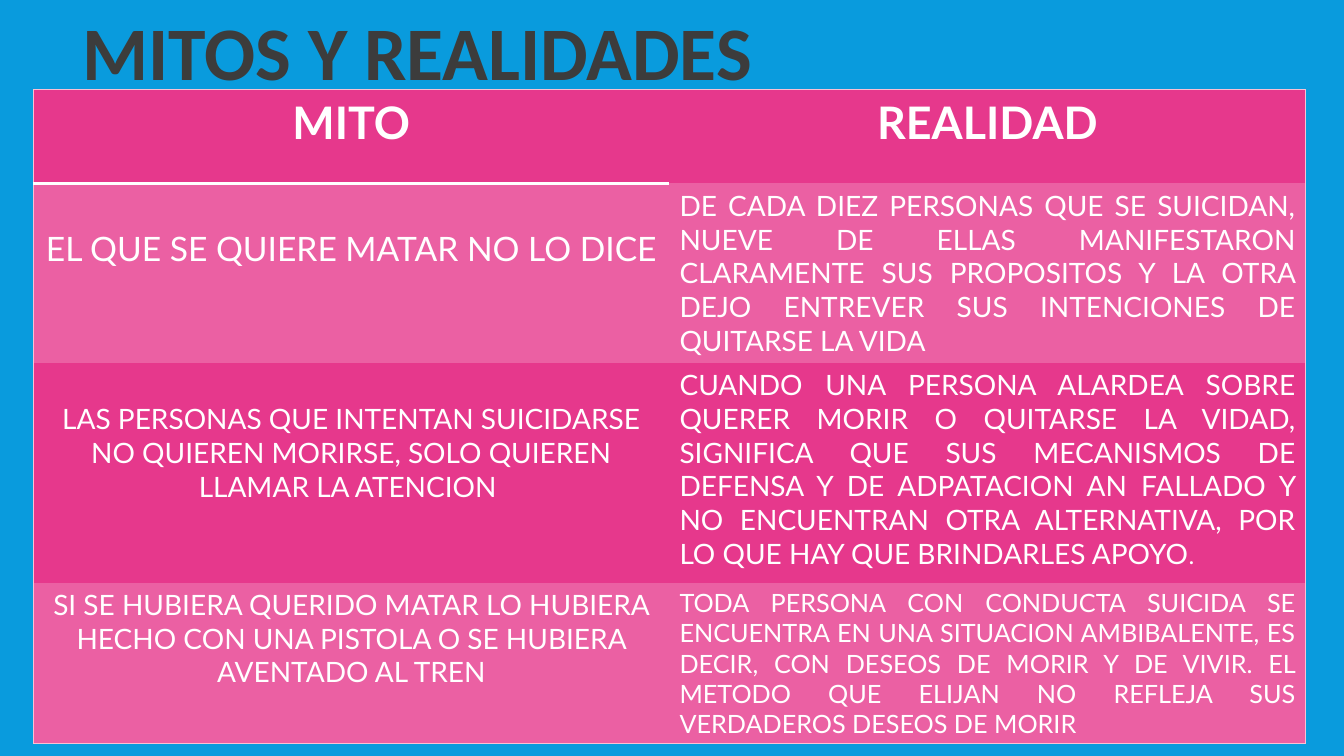
import pptx
import pptx.util
import pptx.dml.color
import pptx.enum.text
import pptx.oxml
import pptx.oxml.ns
import lxml.etree

Inches = pptx.util.Inches
Pt = pptx.util.Pt
qn = pptx.oxml.ns.qn
ALIGN = pptx.enum.text.PP_ALIGN
COLORS = {
    "sky": "099BDD", "pink": "E6388C", "light": "EB60A3", "edge": "F9C0D4",
    "white": "FFFFFF", "title": "3C3C3C", "line": "2C2C2C",
}
PLAIN = "{2D5ABB26-0587-4C30-8999-92F81FD0307C}"
WIDTHS = [6.31, 6.31]
HEIGHTS = [0.93, 1.78, 2.18, 1.6]
ROWS = [
    [("MITO", 32, 0.05), ("REALIDAD", 32, 0.05)],
    [("EL QUE SE QUIERE MATAR NO LO DICE", 24, 0.45),
     ("DE CADA DIEZ PERSONAS QUE SE SUICIDAN, NUEVE DE ELLAS MANIFESTARON "
      "CLARAMENTE SUS PROPOSITOS Y LA OTRA DEJO ENTREVER SUS INTENCIONES DE "
      "QUITARSE LA VIDA", 20, 0.05)],
    [("LAS PERSONAS QUE INTENTAN SUICIDARSE NO QUIEREN MORIRSE, SOLO QUIEREN "
      "LLAMAR LA ATENCION ", 20, 0.39),
     ("CUANDO UNA PERSONA ALARDEA SOBRE QUERER MORIR O QUITARSE LA VIDAD, "
      "SIGNIFICA QUE SUS MECANISMOS DE DEFENSA Y DE ADPATACION AN FALLADO Y NO "
      "ENCUENTRAN OTRA ALTERNATIVA, POR LO QUE HAY QUE BRINDARLES APOYO", 20, 0.05)],
    [("SI SE HUBIERA QUERIDO MATAR LO HUBIERA HECHO CON UNA PISTOLA O SE HUBIERA "
      "AVENTADO AL TREN", 20, 0.05),
     ("TODA PERSONA CON CONDUCTA SUICIDA SE ENCUENTRA EN UNA SITUACION "
      "AMBIBALENTE, ES DECIR, CON DESEOS DE MORIR Y DE VIVIR. EL METODO QUE "
      "ELIJAN NO REFLEJA SUS VERDADEROS DESEOS DE MORIR", 18, 0.05)],
]


class Deck:
    """Holds the style and the current slide."""

    def __init__(self):
        self.show = pptx.Presentation()
        self.show.slide_width = Inches(13.33)
        self.show.slide_height = Inches(7.5)
        self.slide = self.show.slides.add_slide(self.show.slide_layouts[6])
        self.paint(self.slide.background.fill, "sky")

    def paint(self, fill, color):
        fill.solid()
        fill.fore_color.rgb = pptx.dml.color.RGBColor.from_string(COLORS[color])

    def style(self, run, size, color="white", bold=False, face="Lato"):
        run.font.size = Pt(size)
        run.font.name = face
        run.font.bold = bold
        self.paint(run.font.fill, color)

    def stroke(self, parent, tag, color, width):
        line = lxml.etree.Element(qn(tag), w=str(Pt(width)))
        fill = lxml.etree.SubElement(line, qn("a:solidFill"))
        lxml.etree.SubElement(fill, qn("a:srgbClr"), val=COLORS[color])
        parent.append(line)
        return line

    def title(self, text, left, top, width, height):
        box = self.slide.shapes.add_textbox(
            Inches(left), Inches(top), Inches(width), Inches(height))
        frame = box.text_frame
        frame.word_wrap = False
        frame.auto_size = pptx.enum.text.MSO_AUTO_SIZE.SHAPE_TO_FIT_TEXT
        frame.text = text
        para = frame.paragraphs[0]
        para.alignment = ALIGN.CENTER
        run = para.runs[0]
        self.style(run, 54, "title", True, "Calibri")
        props = run.font._element
        props.insert(0, self.stroke(props, "a:ln", "line", 0.75))

    def cell(self, cell, row, col, text, size, top):
        cell.margin_top = Inches(top)
        cell.text_frame.text = text
        para = cell.text_frame.paragraphs[0]
        para.alignment = ALIGN.JUSTIFY if row and col else ALIGN.CENTER
        self.style(para.runs[0], size, bold=row == 0)
        props = cell._tc.get_or_add_tcPr()
        self.stroke(props, "a:lnR" if col else "a:lnL", "edge", 0.75)
        if row == 0:
            self.stroke(props, "a:lnT", "edge", 0.75)
            if col == 0:
                self.stroke(props, "a:lnB", "white", 2)
        elif row == len(ROWS) - 1:
            self.stroke(props, "a:lnB", "edge", 0.75)
        self.paint(cell.fill, "light" if row % 2 else "pink")

    def table(self, left, top):
        frame = self.slide.shapes.add_table(
            len(ROWS), len(WIDTHS), Inches(left), Inches(top),
            Inches(sum(WIDTHS)), Inches(sum(HEIGHTS)))
        table = frame.table
        table._tbl.tblPr.find(qn("a:tableStyleId")).text = PLAIN
        for col, width in zip(table.columns, WIDTHS):
            col.width = Inches(width)
        for row, height in zip(table.rows, HEIGHTS):
            row.height = Inches(height)
        for row, items in enumerate(ROWS):
            for col, item in enumerate(items):
                self.cell(table.cell(row, col), row, col, *item)
        return table


def main():
    deck = Deck()
    table = deck.table(0.33, 0.89)
    dot = table.cell(2, 1).text_frame.paragraphs[0].add_run()
    dot.text = "."
    deck.style(dot, 18, face="Calibri")
    deck.title("MITOS Y REALIDADES", 0.35, 0, 7.58, 1.01)
    deck.show.save("out.pptx")


if __name__ == "__main__":
    main()
